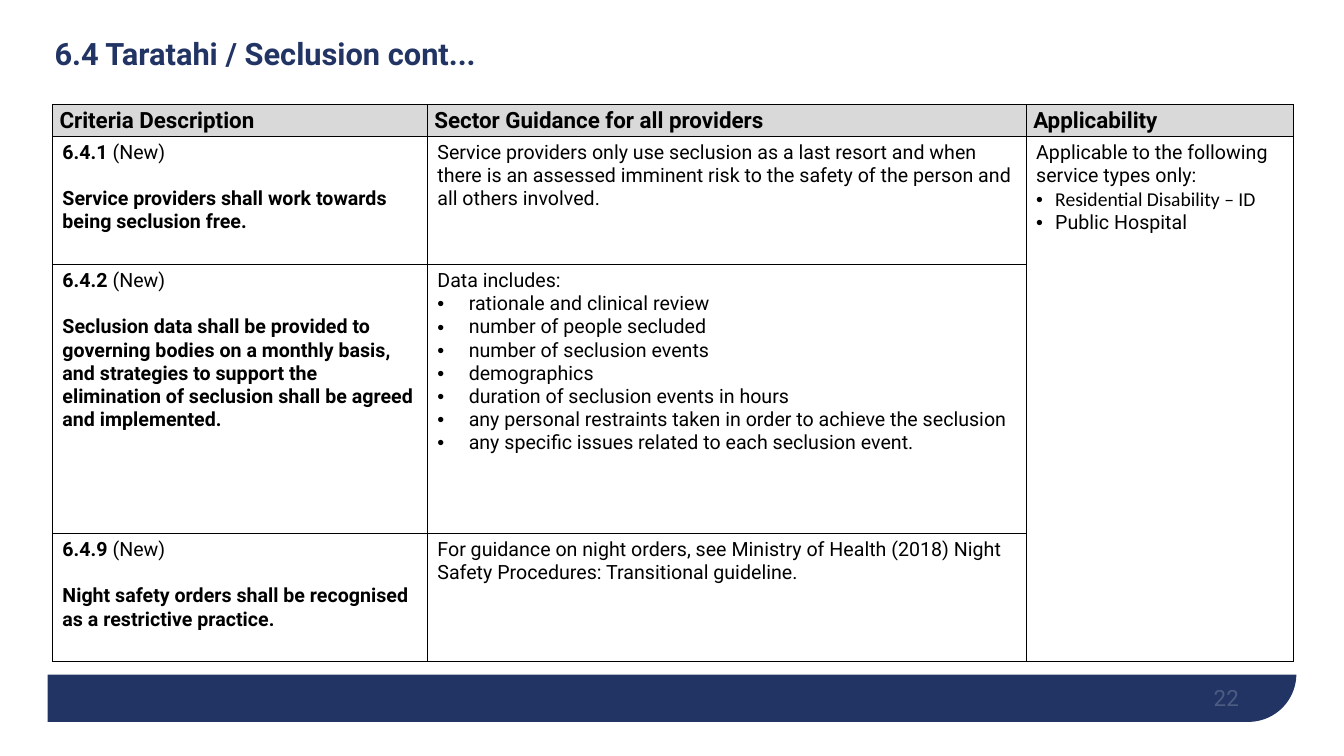
from dataclasses import dataclass

from lxml import etree
from pptx import Presentation
from pptx.dml.color import RGBColor
from pptx.enum.shapes import MSO_SHAPE
from pptx.enum.text import MSO_ANCHOR, PP_ALIGN
from pptx.oxml import parse_xml
from pptx.oxml.ns import nsdecls, qn
from pptx.util import Cm, Pt

ROUND, RECT = MSO_SHAPE.ROUND_1_RECTANGLE, MSO_SHAPE.RECTANGLE
LEFT, RIGHT = PP_ALIGN.LEFT, PP_ALIGN.RIGHT
MIDDLE, BOTTOM, TOP = MSO_ANCHOR.MIDDLE, MSO_ANCHOR.BOTTOM, MSO_ANCHOR.TOP


@dataclass(frozen=True)
class Theme:
    navy: str = "213463"
    white: str = "FFFFFF"
    black: str = "000000"
    grey: str = "D9D9D9"
    font: str = "Roboto"
    alt: str = "Calibri"
    title: int = 22
    head: int = 16
    body: int = 14
    gap: float = 16.5


THEME = Theme()

# Row content: criterion number, its wording, guidance lead, guidance list
ROWS = [
    ("6.4.1", "Service providers shall work towards being seclusion free.",
     "Service providers only use seclusion as a last resort and when there is an "
     "assessed imminent risk to the safety of the person and all others involved.", []),
    ("6.4.2", "Seclusion data shall be provided to governing bodies on a monthly basis, "
     "and strategies to support the elimination of seclusion shall be agreed and implemented.",
     "Data includes:",
     ["rationale and clinical review", "number of people secluded",
      "number of seclusion events", "demographics",
      "duration of seclusion events in hours",
      "any personal restraints taken in order to achieve the seclusion",
      "any specific issues related to each seclusion event."]),
    ("6.4.9", "Night safety orders shall be recognised as a restrictive practice.",
     "For guidance on night orders, see Ministry of Health (2018) Night Safety "
     "Procedures: Transitional guideline.", []),
]
HEADS = ["Criteria Description", "Sector Guidance for all providers", "Applicability"]
WIDTHS = [9.45, 15.09, 6.73]
HEIGHTS = [0.79, 3.23, 6.78, 3.23]


def apply(item, values):
    for name, value in values.items():
        setattr(item, name, value)


def add_run(para, text, size=THEME.body, bold=False, color=THEME.black, font=THEME.font):
    run = para.add_run()
    run.text = text
    apply(run.font, {"name": font, "size": Pt(size), "bold": bold})
    run.font.color.rgb = RGBColor.from_string(color)
    return run


def add_item(frame, text, indent, font=THEME.font):
    para = frame.add_paragraph()
    props = para._p.get_or_add_pPr()
    props.set("marL", str(Cm(indent)))
    props.set("indent", str(-Cm(indent)))
    etree.SubElement(props, qn("a:buFont")).set("typeface", "Arial")
    etree.SubElement(props, qn("a:buChar")).set("char", "•")
    add_run(para, text, font=font)


def add_block(slide, kind, color, *box):
    block = slide.shapes.add_shape(kind, *map(Cm, box))
    block.shadow.inherit = False
    block.fill.solid()
    block.fill.fore_color.rgb = RGBColor.from_string(color)
    block.line.fill.background()
    return block


def add_band(slide):
    # A tall panel, masked in white so only its foot shows
    panel = add_block(slide, ROUND, THEME.navy, 1.2, 0.94, 31.47, 17.25)
    panel.adjustments[0] = 0.07
    panel.rotation = 180
    panel._element.spPr.xfrm.set("flipH", "1")
    add_block(slide, RECT, THEME.white, 0, 0, 33.87, 17)


def add_number(slide, text):
    frame = slide.shapes.add_textbox(Cm(23.6), Cm(16.89), Cm(7.62), Cm(1.02)).text_frame
    apply(frame, {"word_wrap": True, "vertical_anchor": BOTTOM, "margin_left": 0,
                  "margin_right": 0, "margin_top": 0, "margin_bottom": 0})
    para = frame.paragraphs[0]
    para.alignment = RIGHT
    run = add_run(para, text, THEME.head, color=THEME.white)
    tint = run._r.find(".//" + qn("a:srgbClr"))
    etree.SubElement(tint, qn("a:alpha")).set("val", "20000")


def set_title(slide, text):
    title = slide.shapes.title
    apply(title, {"left": Cm(1.12), "top": Cm(0.84), "width": Cm(29.21), "height": Cm(1.14)})
    apply(title.text_frame, {"word_wrap": True, "vertical_anchor": MIDDLE})
    para = title.text_frame.paragraphs[0]
    apply(para, {"alignment": LEFT, "line_spacing": 0.9})
    add_run(para, text, THEME.title, True, THEME.navy)


def style_cell(cell, color, anchor):
    props = cell._tc.get_or_add_tcPr()
    for side in ("lnL", "lnR", "lnT", "lnB"):
        props.append(parse_xml(
            f'<a:{side} {nsdecls("a")} w="{Pt(1)}"><a:solidFill>'
            f'<a:srgbClr val="{THEME.black}"/></a:solidFill></a:{side}>'))
    cell.fill.solid()
    cell.fill.fore_color.rgb = RGBColor.from_string(color)
    cell.vertical_anchor = anchor


def fill_head(cell, text):
    style_cell(cell, THEME.grey, MIDDLE)
    apply(cell, {"margin_left": Cm(0.18), "margin_right": Cm(0.18),
                 "margin_top": 0, "margin_bottom": 0})
    add_run(cell.text_frame.paragraphs[0], text, THEME.head, True)


def fill_rule(cell, code, text):
    first = cell.text_frame.paragraphs[0]
    add_run(first, code, bold=True)
    add_run(first, " (New)")
    para = cell.text_frame.add_paragraph()
    para.space_before = Pt(THEME.gap)
    add_run(para, text, bold=True)


def fill_guide(cell, lead, items):
    add_run(cell.text_frame.paragraphs[0], lead)
    for text in items:
        add_item(cell.text_frame, text, 0.79)


def fill_scope(cell):
    frame = cell.text_frame
    add_run(frame.paragraphs[0], "Applicable to the following service types only:")
    add_item(frame, "Residential Disability – ID", 0.48, THEME.alt)
    add_item(frame, "Public Hospital", 0.48)


def add_grid(slide):
    grid = slide.shapes.add_table(len(HEIGHTS), len(WIDTHS), Cm(1.32), Cm(2.64),
                                  Cm(sum(WIDTHS)), Cm(sum(HEIGHTS))).table
    apply(grid, {"first_row": False, "horz_banding": False})
    for col, width in zip(grid.columns, WIDTHS):
        col.width = Cm(width)
    for row, height in zip(grid.rows, HEIGHTS):
        row.height = Cm(height)
    for col, text in enumerate(HEADS):
        fill_head(grid.cell(0, col), text)
    for row, (code, rule, lead, items) in enumerate(ROWS, 1):
        for col in range(len(WIDTHS)):
            style_cell(grid.cell(row, col), THEME.white, TOP)
        fill_rule(grid.cell(row, 0), code, rule)
        fill_guide(grid.cell(row, 1), lead, items)
    # Applicability spans every criterion
    grid.cell(1, 2).merge(grid.cell(len(ROWS), 2))
    fill_scope(grid.cell(1, 2))


def main():
    deck = Presentation()
    apply(deck, {"slide_width": Cm(33.87), "slide_height": Cm(19.05)})
    slide = deck.slides.add_slide(deck.slide_layouts[5])
    add_band(slide)
    add_number(slide, "22")
    set_title(slide, "6.4 Taratahi / Seclusion cont...")
    # Bring the title in front of the white mask
    slide.shapes._spTree.append(slide.shapes.title._element)
    add_grid(slide)
    deck.save("out.pptx")


if __name__ == "__main__":
    main()
